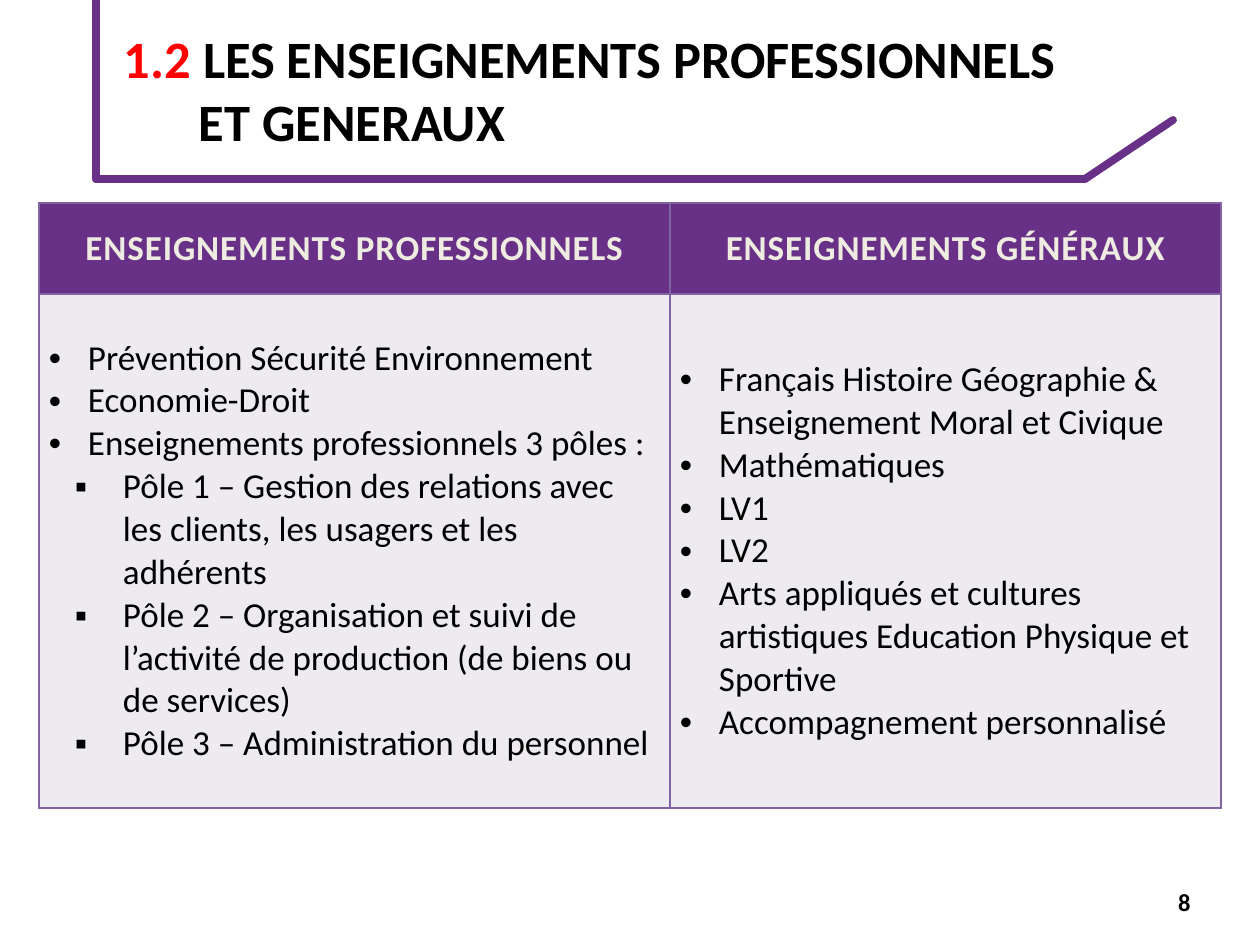
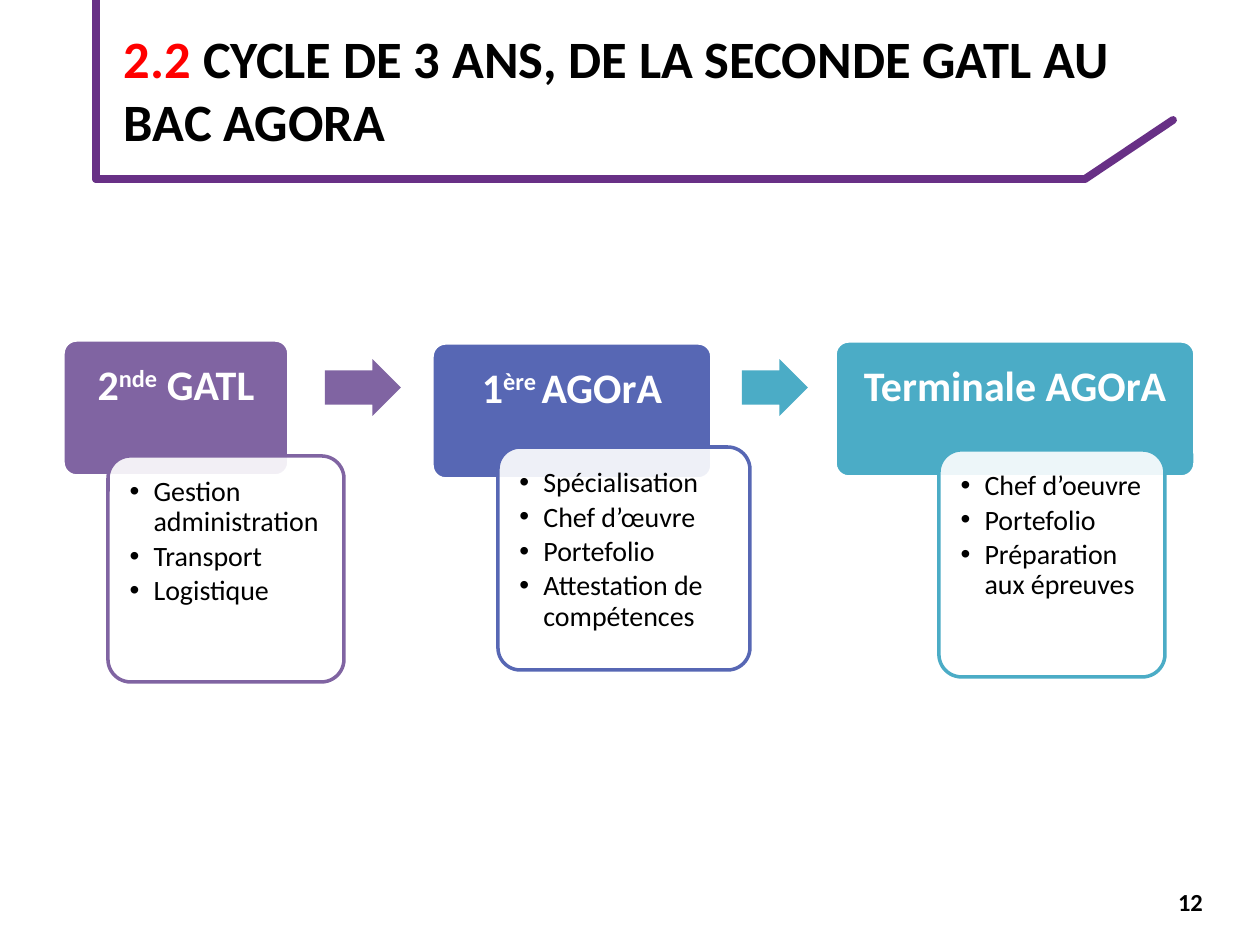
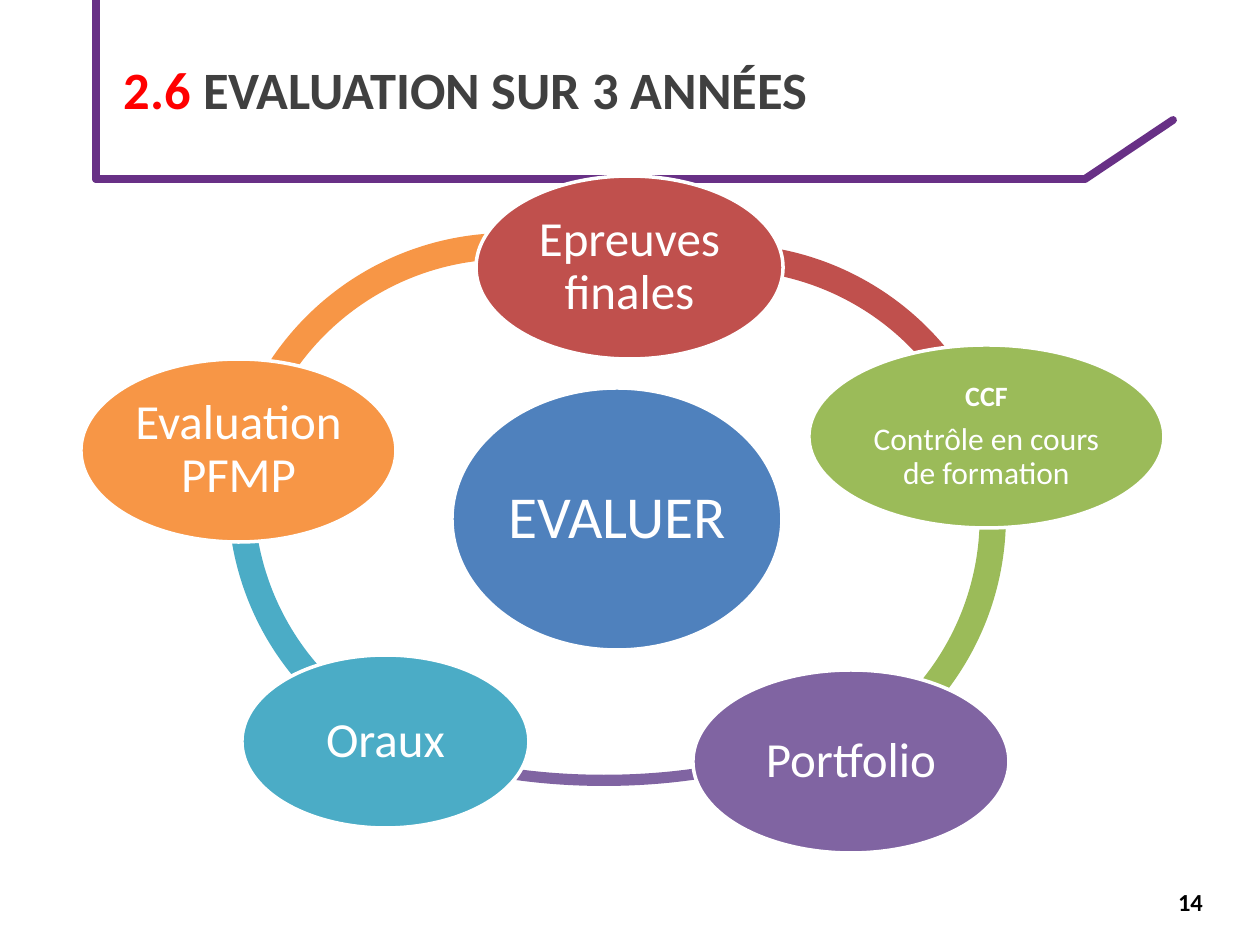
from itertools import pairwise

from lxml.etree import SubElement
from pptx import Presentation
from pptx.dml.color import RGBColor
from pptx.enum.shapes import MSO_CONNECTOR, MSO_SHAPE
from pptx.enum.text import MSO_ANCHOR, PP_ALIGN
from pptx.oxml.ns import qn
from pptx.util import Pt

PX = 914400 / 126
FONT = "Calibri"
INK = {
    "frame": "683086", "num": "FF0000", "black": "000000", "grey": "404040",
    "white": "FFFFFF", "cream": "EEECE1", "pale": "EDEAF0",
    "violet": "8064A2", "indigo": "5767B4", "teal": "4BACC6",
    "orange": "F79646", "green": "9BBB59", "red": "C0504D", "blue": "4F81BD",
}

# Content: a paragraph is a string or a list of (text, run format)
HEADS = ["ENSEIGNEMENTS PROFESSIONNELS", "ENSEIGNEMENTS GÉNÉRAUX"]
TRADE = ["Prévention Sécurité Environnement", "Economie-Droit",
         "Enseignements professionnels 3 pôles :"]
POLES = ["Pôle 1 – Gestion des relations avec les clients, les usagers et les adhérents",
         "Pôle 2 – Organisation et suivi de l’activité de production (de biens ou de services)",
         "Pôle 3 – Administration du personnel"]
CORE = ["Français Histoire Géographie & Enseignement Moral et Civique",
        "Mathématiques", "LV1", "LV2",
        "Arts appliqués et cultures artistiques Education Physique et Sportive",
        "Accompagnement personnalisé"]
COLS, ROWS = (631, 551), (91, 514)

SUP = {"base": 30000}
YEARS = [  # head, colour, head box, items, body box
    ([("2", {}), ("nde", SUP), (" GATL", {})], "violet", (63, 340, 226, 136),
     ["Gestion administration", "Transport", "Logistique"], (108, 456, 236, 226)),
    ([("1", {}), ("ère ", SUP), ("AGOrA", {})], "indigo", (432, 343, 280, 136),
     ["Spécialisation", "Chef d’œuvre", "Portefolio", "Attestation de compétences"],
     (498, 447, 252, 223)),
    ("Terminale AGOrA", "teal", (835, 341, 360, 136),
     ["Chef d’oeuvre", "Portefolio", "Préparation aux épreuves"], (939, 450, 226, 227)),
]
ARROWS = [("violet", (325, 359, 76, 57)), ("teal", (742, 359, 66, 57))]

ARCS = [  # colour, box, start and end in degrees, clockwise from the right
    ("orange", (223, 233, 570, 570), 205, 270),
    ("teal", (228, 210, 570, 570), 130, 175),
    ("violet", (319, 542, 570, 244), 45, 135),
    ("green", (436, 232, 570, 570), 345, 42),
    ("red", (441, 244, 570, 570), 270, 330),
]
CCF = [[("CCF", {"size": 16, "bold": True})],
       [("Contrôle en cours de formation", {"size": 18})]]
OVALS = [  # paragraphs, size, colour, box
    (["EVALUER"], 34, "blue", (452, 388, 330, 262)),
    (["Epreuves finales"], 28, "red", (476, 176, 307, 183)),
    (CCF, 18, "green", (809, 345, 355, 183)),
    (["Portfolio"], 28, "violet", (693, 670, 316, 183)),
    (["Oraux"], 28, "teal", (242, 655, 287, 173)),
    (["Evaluation PFMP"], 28, "orange", (81, 359, 315, 183)),
]


def px(*vals):
    return [round(v * PX) for v in vals]


def rgb(name):
    return RGBColor.from_string(INK[name])


def add_run(para, words, size, ink, bold=False, base=0, spc=0):
    run = para.add_run()
    run.text = words
    font = run.font
    font.name, font.size, font.bold = FONT, Pt(size), bold
    font.color.rgb = rgb(ink)
    for key, val in (("baseline", base), ("spc", spc)):
        if val:
            font._element.set(key, str(val))


def write(frame, paras, align=PP_ALIGN.LEFT, line=None, after=0, marks=None,
          left=0, hang=0, **style):
    """Fill a text frame; marks gives one (bullet, left, hang) per paragraph."""
    for i, item in enumerate(paras):
        para = frame.paragraphs[0] if i == 0 else frame.add_paragraph()
        props = para._p.get_or_add_pPr()
        mark, left_px, hang_px = marks[i] if marks else (None, left, hang)
        if left_px:
            props.set("marL", str(px(left_px)[0]))
            props.set("indent", str(px(-hang_px)[0]))
        if mark:
            SubElement(props, qn("a:buFont")).set("typeface", "Arial")
            SubElement(props, qn("a:buChar")).set("char", mark)
        para.alignment = align
        if line:
            para.line_spacing = line
        para.space_after = Pt(after)
        for words, extra in [(item, {})] if isinstance(item, str) else item:
            if words == "\n":
                para.add_line_break()
            else:
                add_run(para, words, **{**style, **extra})


def set_frame(frame, anchor, pads):
    frame.word_wrap = True
    frame.vertical_anchor = anchor
    (frame.margin_left, frame.margin_top,
     frame.margin_right, frame.margin_bottom) = px(*pads)
    return frame


def add_box(slide, box, paras, anchor=MSO_ANCHOR.TOP, **style):
    shape = slide.shapes.add_textbox(*px(*box))
    write(set_frame(shape.text_frame, anchor, (13, 6, 13, 6)), paras, **style)


def add_form(slide, kind, box, fill, edge=None, adjust=(), alpha=None):
    shape = slide.shapes.add_shape(kind, *px(*box))
    shape.shadow.inherit = False
    shape.fill.solid()
    shape.fill.fore_color.rgb = rgb(fill)
    if alpha:
        tint = shape._element.spPr.find(qn("a:solidFill"))[0]
        SubElement(tint, qn("a:alpha")).set("val", str(alpha * 1000))
    if edge:
        shape.line.color.rgb = rgb(edge)
        shape.line.width = Pt(2)
    else:
        shape.line.fill.background()
    for i, val in enumerate(adjust):
        shape.adjustments[i] = val
    return shape


def add_page(deck, title, page, ink="black", **style):
    """New slide with the title frame, title and page number."""
    slide = deck.slides.add_slide(deck.slide_layouts[6])
    for start, end in pairwise([(96, 0), (96, 179), (1085, 179), (1173, 120)]):
        line = slide.shapes.add_connector(MSO_CONNECTOR.STRAIGHT, *px(*start, *end))
        line.line.color.rgb = rgb("frame")
        line.line.width = Pt(4.5)
        line.line._get_or_add_ln().set("cap", "rnd")
        SubElement(line._element.spPr, qn("a:effectLst"))
    add_box(slide, (111, 0, 1086, 178), [title], anchor=MSO_ANCHOR.MIDDLE,
            size=30, ink=ink, bold=True, **style)
    add_box(slide, (1165, 881, 84, 50), [page], size=14, ink="black", bold=True)
    return slide


def set_cell(cell, fill, paras, marks=None, **style):
    props = cell._tc.get_or_add_tcPr()
    for side in ("lnL", "lnR", "lnT", "lnB"):
        edge = SubElement(props, qn("a:" + side), w=str(Pt(1)))
        tint = SubElement(edge, qn("a:solidFill"))
        SubElement(tint, qn("a:srgbClr")).set("val", INK["violet"])
    cell.fill.solid()
    cell.fill.fore_color.rgb = rgb(fill)
    cell.vertical_anchor = MSO_ANCHOR.MIDDLE
    cell.margin_left, cell.margin_top, cell.margin_right, cell.margin_bottom = px(*[10] * 4)
    write(cell.text_frame, paras, marks=marks, size=20, **style)


def number(text):
    return (text + " ", {"ink": "num"})


def add_courses(deck):
    title = [number("1.2"), ("LES ENSEIGNEMENTS PROFESSIONNELS", {}),
             ("\n", {}), ("ET GENERAUX", {})]
    slide = add_page(deck, title, "8", left=75, hang=75)
    grid = slide.shapes.add_table(2, 2, *px(39, 203, sum(COLS), sum(ROWS))).table
    grid.horz_banding = False
    for col, width in zip(grid.columns, px(*COLS)):
        col.width = width
    for row, height in zip(grid.rows, px(*ROWS)):
        row.height = height
    dot, sub = ("•", 39, 39), ("▪", 74, 48)
    lists = [(TRADE + POLES, [dot] * len(TRADE) + [sub] * len(POLES)),
             (CORE, [dot] * len(CORE))]
    for i, (head, (items, marks)) in enumerate(zip(HEADS, lists)):
        set_cell(grid.cell(0, i), "frame", [head], align=PP_ALIGN.CENTER,
                 ink="cream", bold=True, spc=50)
        set_cell(grid.cell(1, i), "pale", items, marks, ink="black")


def add_cycle(deck):
    title = [number("2.2"), ("CYCLE DE 3 ANS, DE LA SECONDE GATL AU BAC AGORA", {})]
    slide = add_page(deck, title, "12")
    for head, ink, top, items, body in YEARS:
        card = add_form(slide, MSO_SHAPE.ROUNDED_RECTANGLE, top, ink, "white", [0.1])
        write(set_frame(card.text_frame, MSO_ANCHOR.TOP, (20, 20, 20, 12)), [head],
              align=PP_ALIGN.CENTER, line=0.9, after=8.4, size=24, ink="white", bold=True)
        card = add_form(slide, MSO_SHAPE.ROUNDED_RECTANGLE, body, "white", ink, [0.1], alpha=90)
        write(set_frame(card.text_frame, MSO_ANCHOR.TOP, [15] * 4), items,
              marks=[("•", 24, 24)] * len(items), line=0.9, after=2.4, size=16, ink="black")
    for ink, box in ARROWS:
        add_form(slide, MSO_SHAPE.RIGHT_ARROW, box, ink, adjust=(0.6, 0.5))


def add_wheel(deck):
    title = [number("2.6"), ("EVALUATION SUR 3 ANNÉES", {})]
    slide = add_page(deck, title, "14", ink="grey")
    # Ring arcs, whose ends lie under the ovals
    for ink, box, start, end in ARCS:
        # One degree is 60000 units, an adjustment of 1 is 100000
        add_form(slide, MSO_SHAPE.BLOCK_ARC, box, ink, adjust=(start * 0.6, end * 0.6, 0.046))
    for paras, size, ink, box in OVALS:
        oval = add_form(slide, MSO_SHAPE.OVAL, box, ink, "white")
        write(set_frame(oval.text_frame, MSO_ANCHOR.MIDDLE, [4] * 4), paras,
              align=PP_ALIGN.CENTER, line=0.9, after=size * 0.35, size=size, ink="white")


def main():
    deck = Presentation()
    deck.slide_width, deck.slide_height = px(1260, 945)
    add_courses(deck)
    add_cycle(deck)
    add_wheel(deck)
    deck.save("out.pptx")


if __name__ == "__main__":
    main()
